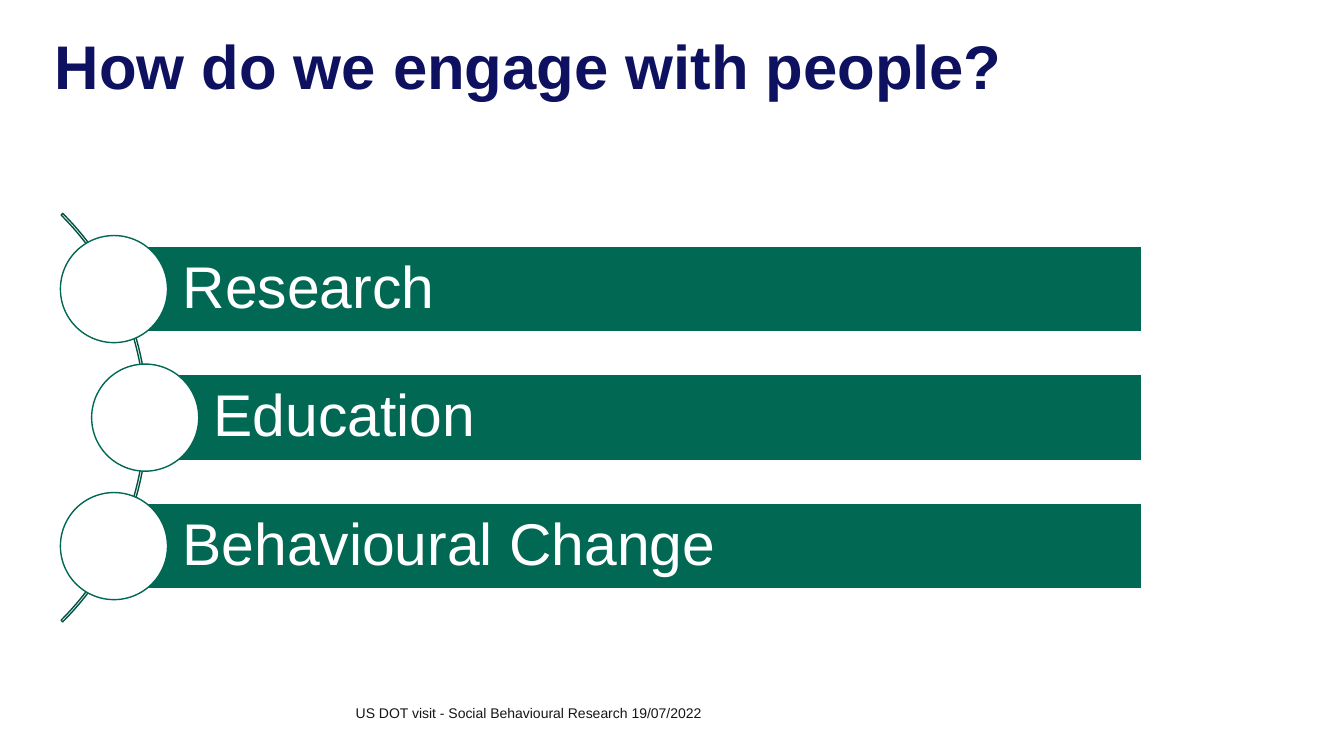
from dataclasses import dataclass

from pptx import Presentation
from pptx.dml.color import RGBColor
from pptx.enum.shapes import MSO_SHAPE
from pptx.enum.text import MSO_ANCHOR, MSO_AUTO_SIZE, PP_ALIGN
from pptx.shapes.autoshape import Shape
from pptx.slide import Slide
from pptx.text.text import TextFrame
from pptx.util import Pt

GREEN = "006853"
WHITE = "FFFFFF"
MID = 298.3
STEP = 91.8
RIGHT = 815.8
BAR = 61.2
DISC = 76.5
ARC = 412.6


@dataclass(frozen=True)
class Topic:
    text: str
    left: float


TOPICS = [
    Topic("Research", 81.4),
    Topic("Education", 103.7),
    Topic("Behavioural Change", 81.4),
]


def color(code: str) -> RGBColor:
    return RGBColor.from_string(code)


def write(frame: TextFrame, text: str, size: float, code: str,
          bold: bool = False, space: float = 1.0) -> None:
    frame.text = text
    frame.word_wrap = True
    frame.auto_size = MSO_AUTO_SIZE.NONE
    para = frame.paragraphs[0]
    para.alignment = PP_ALIGN.LEFT
    para.line_spacing = space
    para.font.name = "Arial"
    para.font.size = Pt(size)
    para.font.bold = bold
    para.font.color.rgb = color(code)


def pad(frame: TextFrame, left: float, rest: float) -> None:
    frame.margin_left = Pt(left)
    frame.margin_top = frame.margin_right = frame.margin_bottom = Pt(rest)


def add_form(slide: Slide, kind: MSO_SHAPE, left: float, top: float,
             width: float, height: float, line: str,
             fill: str | None = None) -> Shape:
    form = slide.shapes.add_shape(kind, Pt(left), Pt(top), Pt(width), Pt(height))
    form.shadow.inherit = False
    form.line.color.rgb = color(line)
    form.line.width = Pt(1)
    if fill:
        form.fill.solid()
        form.fill.fore_color.rgb = color(fill)
    else:
        form.fill.background()
    return form


def add_title(slide: Slide) -> None:
    title = slide.shapes.title
    title.left, title.top = Pt(39), Pt(26)
    title.width, title.height = Pt(781), Pt(98.6)
    frame = title.text_frame
    frame.vertical_anchor = MSO_ANCHOR.TOP
    pad(frame, 0, 0)
    write(frame, "How do we engage with people?", 44, "0E115F", True, 0.9)


def add_foot(slide: Slide) -> None:
    foot = slide.shapes.add_textbox(Pt(247), Pt(499.7), Pt(375), Pt(22.3))
    write(foot.text_frame, "US DOT visit - Social Behavioural Research 19/07/2022",
          10, "161616")


def add_arc(slide: Slide) -> None:
    arc = add_form(slide, MSO_SHAPE.BLOCK_ARC, -307.4, MID - ARC / 2,
                   ARC, ARC, "005342")
    for spot, value in enumerate((189, 27, 0.004)):
        arc.adjustments[spot] = value


def add_topic(slide: Slide, topic: Topic, center: float) -> None:
    bar = add_form(slide, MSO_SHAPE.RECTANGLE, topic.left, center - BAR / 2,
                   RIGHT - topic.left, BAR, WHITE, GREEN)
    frame = bar.text_frame
    frame.vertical_anchor = MSO_ANCHOR.MIDDLE
    pad(frame, 49, 8.6)
    write(frame, topic.text, 42, WHITE, space=0.9)
    add_form(slide, MSO_SHAPE.OVAL, topic.left - DISC / 2, center - DISC / 2,
             DISC, DISC, GREEN, WHITE)


def main() -> None:
    deck = Presentation()
    deck.slide_width, deck.slide_height = Pt(960), Pt(540)
    slide = deck.slides.add_slide(deck.slide_layouts[5])
    add_title(slide)
    add_foot(slide)
    add_arc(slide)
    for row, topic in enumerate(TOPICS):
        add_topic(slide, topic, MID + (row - 1) * STEP)
    deck.save("out.pptx")


if __name__ == "__main__":
    main()
